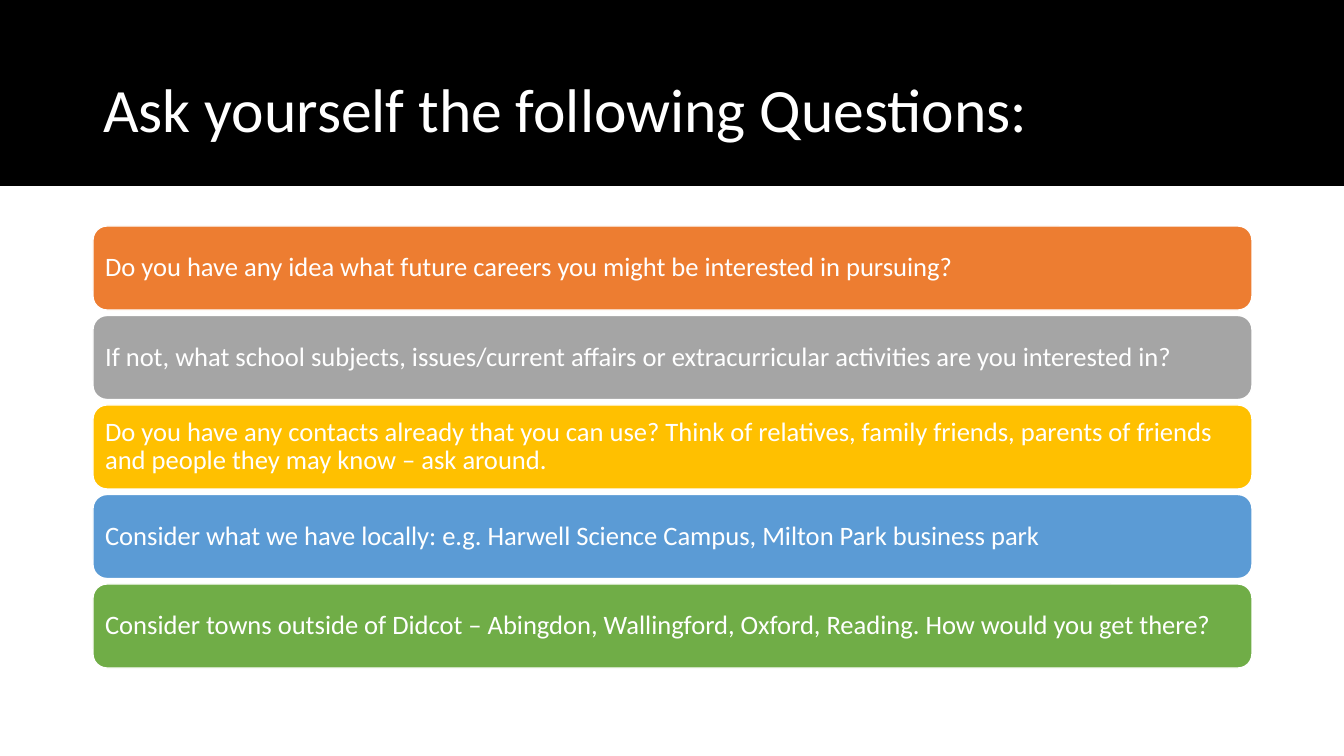
from pptx import Presentation
from pptx.dml.color import RGBColor
from pptx.enum.shapes import MSO_SHAPE
from pptx.enum.text import MSO_ANCHOR, PP_ALIGN
from pptx.util import Pt

EMU_PER_PX = 914400 / 100.8
SLIDE_W, SLIDE_H = 1344, 756
HEADER_H = 186
LEFT, CONTENT_W = 93, 1159
FIRST_TOP, LAST_TOP, BAR_H = 226, 584, 84
WHITE, BLACK = "FFFFFF", "000000"

QUESTIONS = [
    ("ED7D31", "Do you have any idea what future careers you might be interested in pursuing?"),
    ("A5A5A5", "If not, what school subjects, issues/current affairs or extracurricular "
               "activities are you interested in?"),
    ("FFC000", "Do you have any contacts already that you can use? Think of relatives, "
               "family friends, parents of friends and people they may know – ask around."),
    ("5B9BD5", "Consider what we have locally: e.g. Harwell Science Campus, "
               "Milton Park business park"),
    ("70AD47", "Consider towns outside of Didcot – Abingdon, Wallingford, Oxford, Reading. "
               "How would you get there?"),
]


def px(n):
    return round(n * EMU_PER_PX)


def rgb(value):
    return RGBColor.from_string(value)


def set_attrs(obj, values):
    for name, value in values.items():
        setattr(obj, name, value)


def write_text(sp, text, size, frame):
    tf = sp.text_frame
    set_attrs(tf, {"word_wrap": True, "vertical_anchor": MSO_ANCHOR.MIDDLE, **frame})
    p = tf.paragraphs[0]
    set_attrs(p, {"alignment": PP_ALIGN.LEFT, "line_spacing": 0.9})
    r = p.add_run()
    r.text = text
    set_attrs(r.font, {"name": "Calibri", "size": Pt(size)})
    r.font.color.rgb = rgb(WHITE)


def add_block(s, kind, left, top, width, height, fill):
    sp = s.shapes.add_shape(kind, px(left), px(top), px(width), px(height))
    sp.shadow.inherit = False
    sp.fill.solid()
    sp.fill.fore_color.rgb = rgb(fill)
    sp.line.fill.background()
    return sp


def add_title(s, text):
    title = s.shapes.title
    title.element.getparent().append(title.element)
    set_attrs(title, {"left": px(LEFT), "top": px(40),
                      "width": px(CONTENT_W), "height": px(146)})
    write_text(title, text, 44, {})


def add_question(s, top, fill, text):
    sp = add_block(s, MSO_SHAPE.ROUNDED_RECTANGLE, LEFT, top, CONTENT_W, BAR_H, fill)
    sp.line.color.rgb = rgb(WHITE)
    sp.line.width = Pt(1)
    sides = ("left", "top", "right", "bottom")
    write_text(sp, text, 19, {f"margin_{side}": px(8) for side in sides})


def main():
    prs = Presentation()
    set_attrs(prs, {"slide_width": px(SLIDE_W), "slide_height": px(SLIDE_H)})
    s = prs.slides.add_slide(prs.slide_layouts[5])
    add_block(s, MSO_SHAPE.RECTANGLE, 0, 0, SLIDE_W, HEADER_H, BLACK)
    add_block(s, MSO_SHAPE.RECTANGLE, 0, HEADER_H, SLIDE_W, SLIDE_H - HEADER_H, WHITE)
    add_title(s, "Ask yourself the following Questions:")
    pitch = (LAST_TOP - FIRST_TOP) / (len(QUESTIONS) - 1)
    for i, (fill, text) in enumerate(QUESTIONS):
        add_question(s, FIRST_TOP + i * pitch, fill, text)
    prs.save("out.pptx")


if __name__ == "__main__":
    main()
